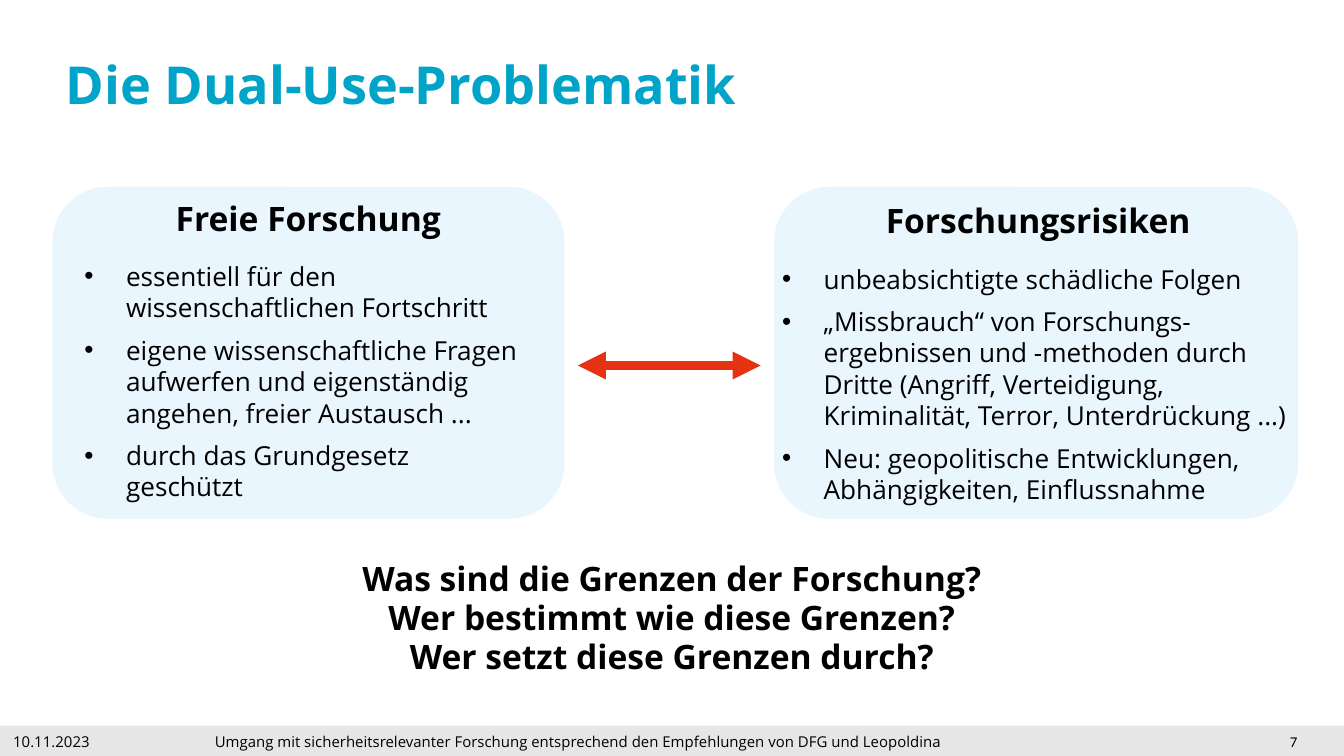
from lxml import etree
from pptx import Presentation
from pptx import util as u
from pptx.dml.color import RGBColor
from pptx.enum import shapes, text
from pptx.oxml.ns import qn

FONT = "Open Sans"


def color(hex_string):
    return RGBColor.from_string(hex_string)


def style(p, size, bold=False, hex_string="000000"):
    for r in p.runs:
        r.font.name = FONT
        r.font.size = u.Pt(size)
        r.font.bold = bold
        r.font.color.rgb = color(hex_string)
    for br in p._p.findall(qn("a:br")):
        etree.SubElement(br, qn("a:rPr"), sz=str(size * 100))


# 16:9 slide
prs = Presentation()
prs.slide_width = u.Inches(10)
prs.slide_height = u.Inches(10 * 9 / 16)
s = prs.slides.add_slide(prs.slide_layouts[5])

# Title
title = s.shapes.title
title.left, title.top = u.Inches(0.39), u.Inches(0.14)
title.width, title.height = u.Inches(9.21), u.Inches(0.99)
tf = title.text_frame
tf.text = "Die Dual-Use-Problematik"
tf.vertical_anchor = text.MSO_ANCHOR.MIDDLE
tf.auto_size = text.MSO_AUTO_SIZE.NONE
p = tf.paragraphs[0]
p.alignment = text.PP_ALIGN.LEFT
p.line_spacing = u.Pt(32)
style(p, 28, True, "00A4C8")

# Footer bar and the two panels
bars = [
    (shapes.MSO_SHAPE.RECTANGLE, 0, 5.4, 10, 0.24, "E7E6E6"),
    (shapes.MSO_SHAPE.ROUNDED_RECTANGLE, 0.39, 1.39, 3.81, 2.47, "EAF6FE"),
    (shapes.MSO_SHAPE.ROUNDED_RECTANGLE, 5.76, 1.39, 3.9, 2.47, "EAF6FE"),
]
panels = []
for kind, x, y, w, h, fill in bars:
    sp = s.shapes.add_shape(kind, u.Inches(x), u.Inches(y), u.Inches(w), u.Inches(h))
    sp.shadow.inherit = False
    sp.fill.solid()
    sp.fill.fore_color.rgb = color(fill)
    sp.line.fill.background()
    panels.append(sp)

# Footer text: date, talk title and page number on tab stops
tf = panels[0].text_frame
tf.margin_top = tf.margin_bottom = 0
tf.vertical_anchor = text.MSO_ANCHOR.MIDDLE
p = tf.paragraphs[0]
p.alignment = text.PP_ALIGN.LEFT
tabs = etree.SubElement(p._p.get_or_add_pPr(), qn("a:tabLst"))
for stop in (1.5, 9.5):
    etree.SubElement(tabs, qn("a:tab"), pos=str(u.Inches(stop)), algn="l")
for part in (
    "10.11.2023\tUmgang mit sicherheitsrelevanter Forschung entsprechend "
    "den Empfehlungen von DFG und Leopoldina\t",
    "7",
):
    p.add_run().text = part
style(p, 8)
p.runs[1].font.name = "Calibri"

# Double arrow between the panels
arrow = s.shapes.add_connector(
    shapes.MSO_CONNECTOR.STRAIGHT,
    u.Inches(4.3), u.Inches(2.72), u.Inches(5.66), u.Inches(2.72))
arrow.line.color.rgb = color("E53212")
arrow.line.width = u.Pt(5)
for end in ("a:headEnd", "a:tailEnd"):
    etree.SubElement(arrow.line._get_or_add_ln(), qn(end), type="triangle")
etree.SubElement(arrow._element.spPr, qn("a:effectLst"))

# Headed bullet lists
lists = [
    (0.53, 1.42, 3.53, 2.71, "Freie Forschung", [
        "essentiell für den wissenschaftlichen Fortschritt",
        "eigene wissenschaftliche Fragen aufwerfen und eigenständig angehen, "
        "freier Austausch ...",
        "durch das Grundgesetz geschützt",
    ]),
    (5.72, 1.44, 4.01, 2.39, "Forschungsrisiken", [
        "unbeabsichtigte schädliche Folgen",
        "„Missbrauch“ von Forschungs-\nergebnissen und -methoden durch Dritte "
        "(Angriff, Verteidigung, Kriminalität, Terror, Unterdrückung ...)",
        "Neu: geopolitische Entwicklungen, Abhängigkeiten, Einflussnahme",
    ]),
]
for x, y, w, h, heading, bullets in lists:
    tf = s.shapes.add_textbox(
        u.Inches(x), u.Inches(y), u.Inches(w), u.Inches(h)).text_frame
    tf.word_wrap = True
    p = tf.paragraphs[0]
    p.text = heading
    p.alignment = text.PP_ALIGN.CENTER
    p.space_after = u.Pt(12)
    style(p, 18, True)
    for bullet in bullets:
        p = tf.add_paragraph()
        p.text = bullet
        p.space_after = u.Pt(6)
        pPr = p._p.get_or_add_pPr()
        pPr.set("marL", str(u.Inches(0.31)))
        pPr.set("indent", str(-u.Inches(0.31)))
        etree.SubElement(pPr, qn("a:buFont"), typeface="Arial")
        etree.SubElement(pPr, qn("a:buChar"), char="•")
        style(p, 14)

# Closing questions
tf = s.shapes.add_textbox(
    u.Inches(2.26), u.Inches(4.16), u.Inches(5.48), u.Inches(1.18)).text_frame
tf.word_wrap = True
tf.margin_left = tf.margin_right = tf.margin_top = tf.margin_bottom = 0
tf.text = ("Was sind die Grenzen der Forschung?\n"
           "Wer bestimmt wie diese Grenzen?\n"
           "Wer setzt diese Grenzen durch?")
for p in tf.paragraphs:
    p.alignment = text.PP_ALIGN.CENTER
    p.line_spacing = u.Pt(21)
    style(p, 18, True)

prs.save("out.pptx")
